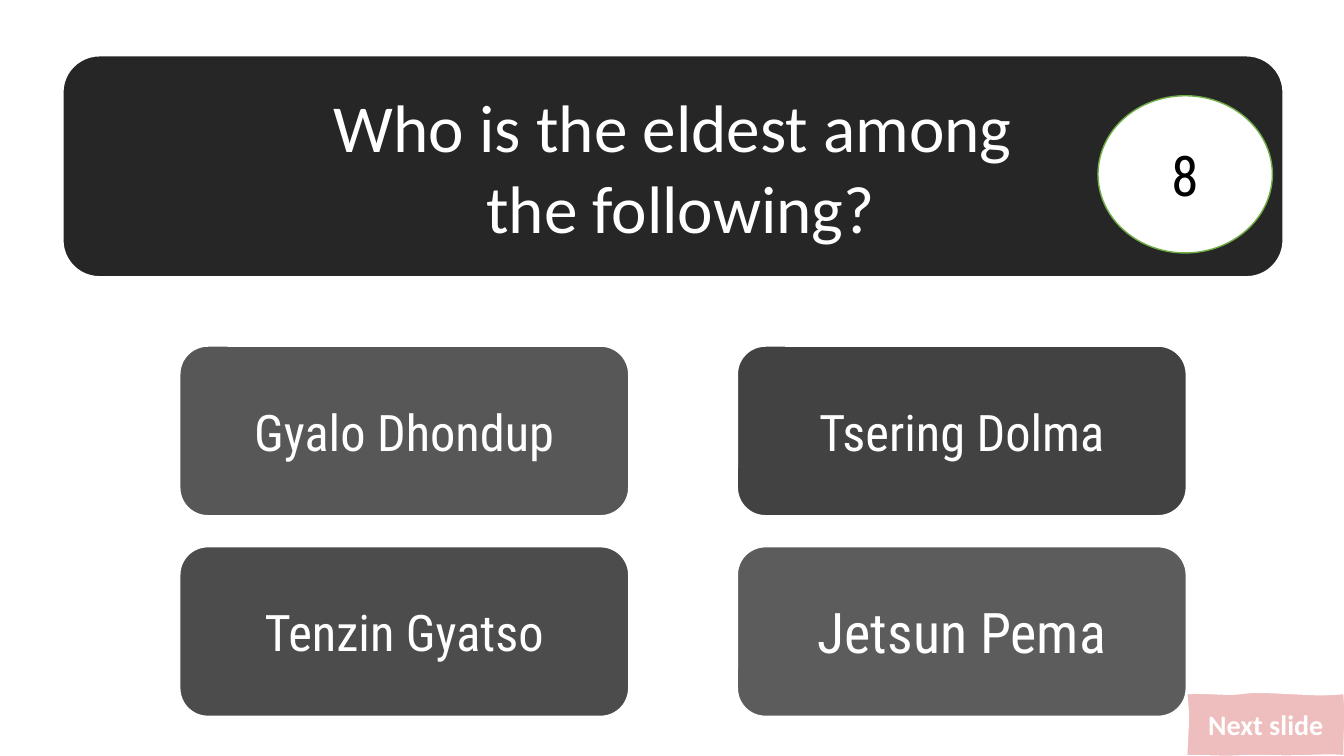
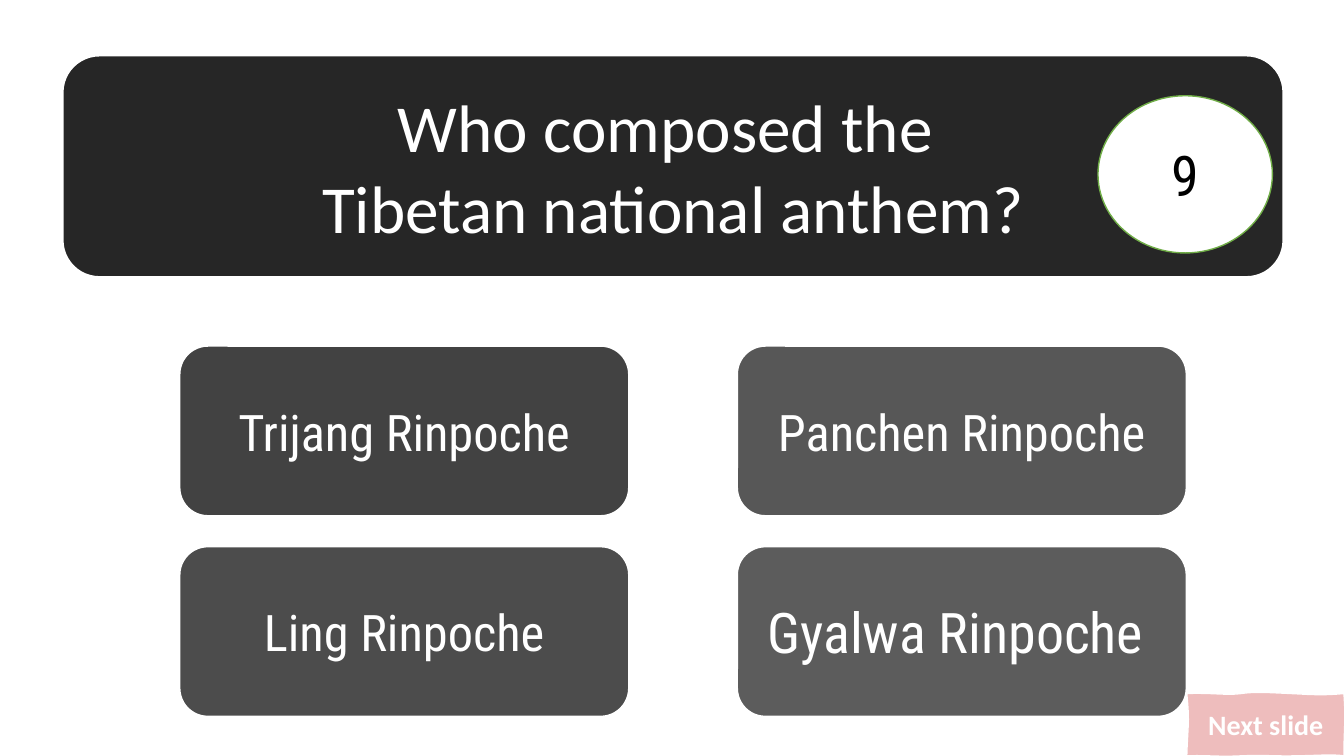
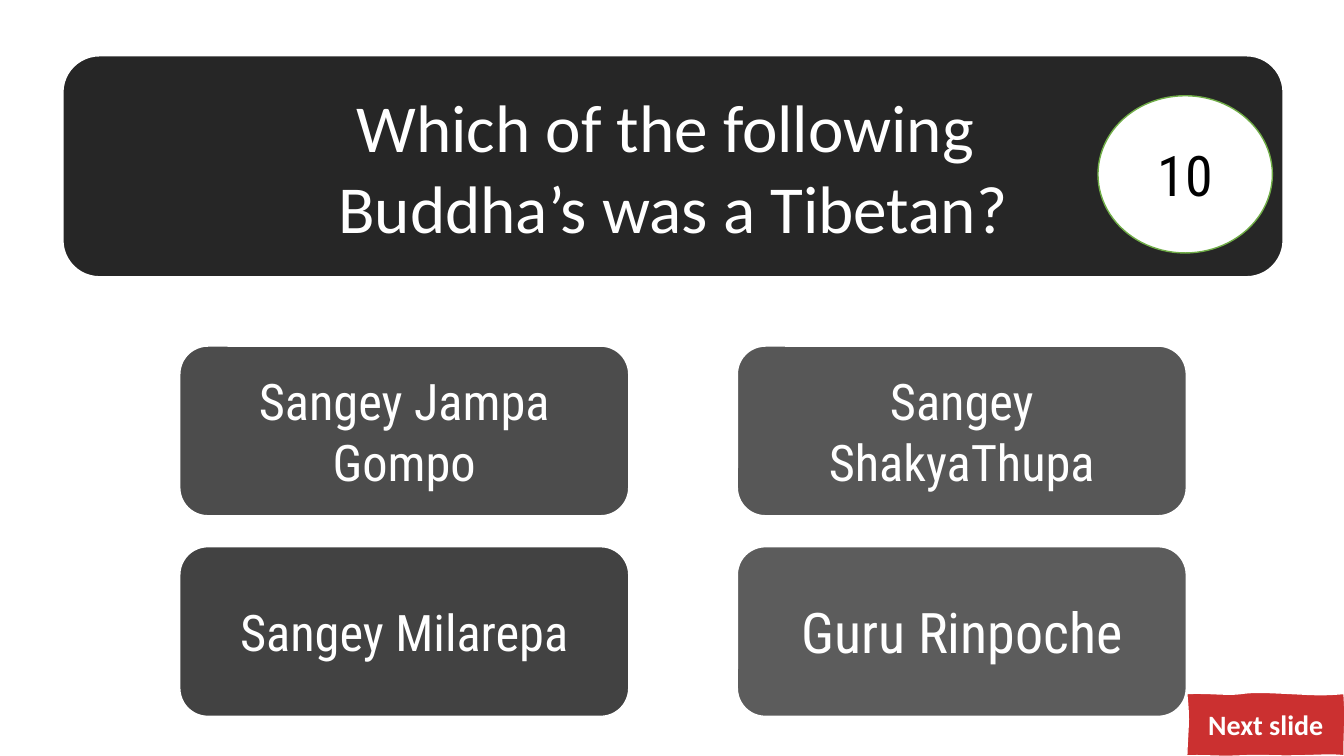
"""Build three quiz slides with a question, four answers and a tag."""
from lxml.etree import SubElement as Sub
from pptx import Presentation as Deck
from pptx.dml.color import RGBColor as Rgb
from pptx.enum.shapes import MSO_SHAPE as Form
from pptx.enum.text import MSO_ANCHOR as Anchor, PP_ALIGN as Align
from pptx.oxml.ns import qn
from pptx.util import Emu, Pt

SCALE = 9144
INK = {"black": "000000", "white": "FFFFFF", "green": "70AD47", "red": "C00000"}
SANS, SLIM = "Calibri", "Roboto Condensed"
SHADES = (74, 70, 66, 64)
START = (1177, 688)
CURVES = [
    ((1201, 687), (1217, 690), (1231, 688)),
    ((1244, 686), (1258, 687), (1280, 688)),
    ((1301, 689), (1310, 690), (1333, 688)),
    ((1335, 717), (1333, 720), (1333, 750)),
    ((1322, 748), (1301, 750), (1278, 750)),
    ((1256, 750), (1252, 749), (1229, 750)),
    ((1206, 751), (1194, 749), (1177, 750)),
    ((1178, 719), (1180, 717), (1177, 688)),
]
QUIZ = [
    (8, ("Who is the eldest among", " the following?"),
     [(1, 0, "Tsering Dolma"), (0, 1, "Tenzin Gyatso"),
      (0, 0, "Gyalo Dhondup"), (1, 1, "Jetsun Pema")], 26),
    (9, ("Who composed the ", "Tibetan national anthem?"),
     [(0, 0, "Trijang Rinpoche"), (0, 1, "Ling Rinpoche"),
      (1, 0, "Panchen Rinpoche"), (1, 1, "Gyalwa Rinpoche ")], 26),
    (10, ("Which of the following ", "Buddha’s was a Tibetan?"),
     [(0, 1, "Sangey Milarepa"), (0, 0, "Sangey Jampa Gompo"),
      (1, 0, "Sangey ShakyaThupa"), (1, 1, "Guru Rinpoche")], 81),
]


def px(num):
    return Emu(round(num * SCALE))


def trace(start, curves, steps=10):
    spots = []
    for a, b, end in curves:
        for i in range(1, steps + 1):
            t = i / steps
            u = 1 - t
            spots.append(tuple(
                px(u**3 * p + 3 * u * u * t * q + 3 * u * t * t * r + t**3 * s)
                for p, q, r, s in zip(start, a, b, end)))
        start = end
    return spots


class Quiz:
    def __init__(self):
        self.deck = Deck()
        self.deck.slide_width, self.deck.slide_height = px(1333), px(750)

    def page(self):
        self.slide = self.deck.slides.add_slide(self.deck.slide_layouts[6])

    def paint(self, shape, fill, alpha, line, width):
        shape.shadow.inherit = False
        shape.fill.solid()
        shape.fill.fore_color.rgb = Rgb.from_string(INK[fill])
        tone = shape.element.spPr.find(qn("a:solidFill"))[0]
        Sub(tone, qn("a:alpha"), val=str(alpha * 1000))
        shape.line.color.rgb = Rgb.from_string(INK[line])
        shape.line.width = Pt(width)

    def label(self, shape, lines, size, face, ink="white", bold=False):
        frame = shape.text_frame
        frame.word_wrap = True
        frame.vertical_anchor = Anchor.MIDDLE
        for i, text in enumerate(lines):
            para = frame.add_paragraph() if i else frame.paragraphs[0]
            para.alignment = Align.CENTER
            run = para.add_run()
            run.text = text
            run.font.size, run.font.name, run.font.bold = Pt(size), face, bold
            run.font.color.rgb = Rgb.from_string(INK[ink])

    def box(self, form, place, fill="black", alpha=100, line="white", width=1.5):
        shape = self.slide.shapes.add_shape(form, *map(px, place))
        self.paint(shape, fill, alpha, line, width)
        return shape

    def banner(self, lines):
        shape = self.box(Form.ROUNDED_RECTANGLE, (62, 55, 1211, 220), alpha=85)
        self.label(shape, lines, 48, SANS)

    def card(self, col, row, text, alpha):
        place = (178 + 553 * col, 343 + 199 * row, 446, 169)
        shape = self.box(Form.ROUNDED_RECTANGLE, place, alpha=alpha)
        self.label(shape, [text], 40 if col and row else 36, SLIM)

    def badge(self, num):
        shape = self.box(Form.OVAL, (1089, 95, 173, 156), "white",
                         line="green", width=1)
        self.label(shape, [str(num)], 40, SLIM, "black")

    def tag(self, alpha):
        pen = self.slide.shapes.build_freeform(*map(px, START), scale=1)
        pen.add_line_segments(trace(START, CURVES), close=True)
        shape = pen.convert_to_shape()
        self.paint(shape, "red", alpha, "white", 1)
        self.label(shape, ["Next slide"], 20, SANS, bold=True)


def main():
    quiz = Quiz()
    for num, lines, cards, alpha in QUIZ:
        quiz.page()
        quiz.banner(lines)
        for card, shade in zip(cards, SHADES):
            quiz.card(*card, shade)
        quiz.badge(num)
        quiz.tag(alpha)
    quiz.deck.save("out.pptx")


if __name__ == "__main__":
    main()
